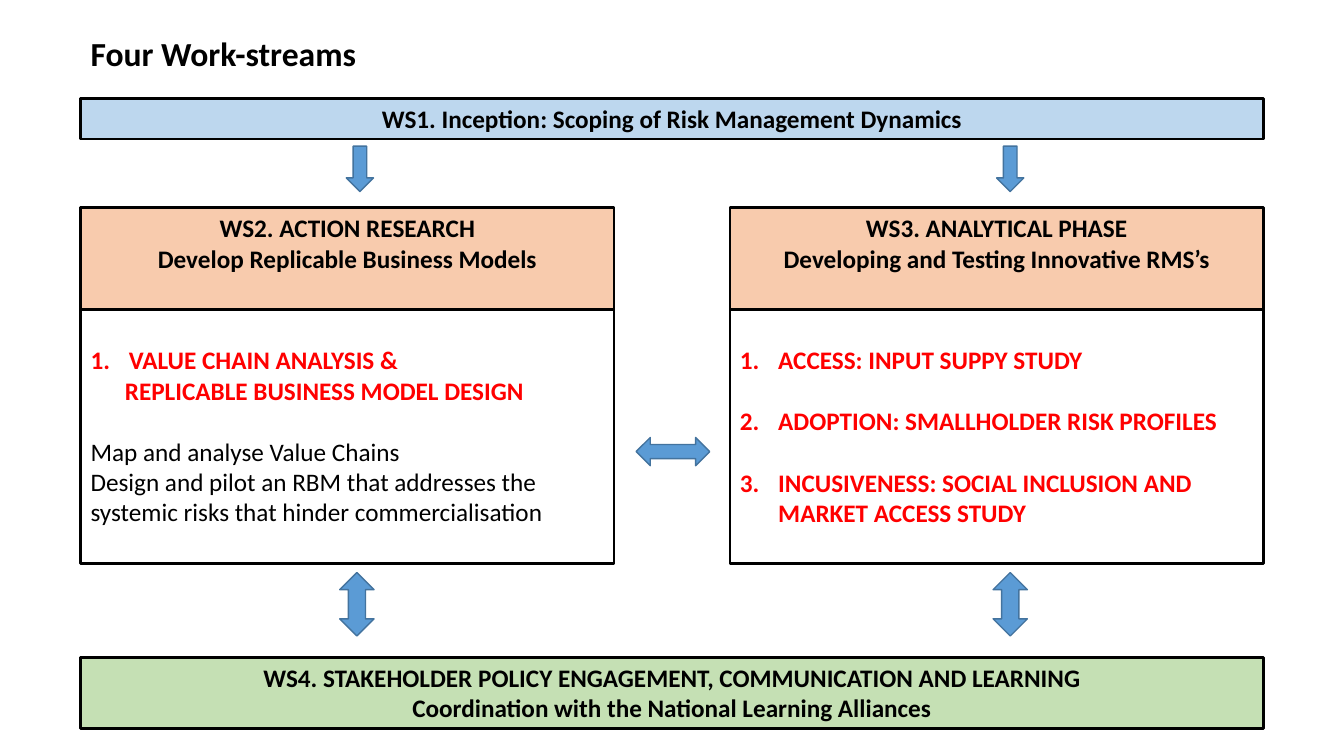
from lxml import etree
from pptx import Presentation, util as u
from pptx.dml.color import RGBColor
from pptx.enum import shapes, text
from pptx.oxml import ns

WIDE, HIGH = 13.33, 7.5
LEFT, FULL, COL = 0.8, 11.73, 5.29
COLS = (LEFT, LEFT + FULL - COL)
HEAD, BODY, FOOT = 2.06, 3.07, 6.52
LINE = 22
RED = "FF0000"
MID = text.PP_ALIGN.CENTER
KIND = shapes.MSO_SHAPE


def color(code):
    return RGBColor.from_string(code)


def write(frame, words, size=18, bold=True, ink="000000", align=None,
          after=0, left=0, number=False):
    first = frame.paragraphs[0]
    para = frame.add_paragraph() if first.runs else first
    para.alignment = align
    para.space_after = u.Pt(after)
    props = para._p.get_or_add_pPr()
    if left:
        props.set("marL", str(u.Inches(left)))
    if number:
        props.set("indent", str(-u.Inches(left)))
        mark = etree.SubElement(props, ns.qn("a:buAutoNum"))
        mark.set("type", "arabicPeriod")
    run = para.add_run()
    run.text = words
    run.font.name = "Calibri"
    run.font.size = u.Pt(size)
    run.font.bold = bold
    run.font.color.rgb = color(ink)


def shape(slide, kind, x, y, w, h, fill=None, edge="000000", thick=2):
    item = slide.shapes.add_shape(kind, *map(u.Inches, (x, y, w, h)))
    item.shadow.inherit = False
    if fill:
        item.fill.solid()
        item.fill.fore_color.rgb = color(fill)
    else:
        item.fill.background()
    item.line.color.rgb = color(edge)
    item.line.width = u.Pt(thick)
    return item


def box(slide, x, y, w, h, fill=None, lines=(), top=0.05):
    frame = shape(slide, KIND.RECTANGLE, x, y, w, h, fill).text_frame
    frame.word_wrap = True
    frame.vertical_anchor = text.MSO_ANCHOR.TOP
    frame.margin_top = u.Inches(top)
    for words in lines:
        write(frame, words, align=MID)
    return frame


def arrow(slide, kind, x, y, w, h):
    shape(slide, kind, x - w / 2, y, w, h, "5B9BD5", "43739E", 1)


def title(slide, words):
    area = map(u.Inches, (LEFT, 0.28, 3.77, 0.5))
    frame = slide.shapes.add_textbox(*area).text_frame
    frame.word_wrap = True
    write(frame, words, size=24)


def main():
    deck = Presentation()
    deck.slide_width, deck.slide_height = u.Inches(WIDE), u.Inches(HIGH)
    slide = deck.slides.add_slide(deck.slide_layouts[6])

    title(slide, "Four Work-streams")
    box(slide, LEFT, 0.98, FULL, 0.4, "BDD7EE",
        ["WS1. Inception: Scoping of Risk Management Dynamics"])

    heads = (
        ("WS2. ACTION RESEARCH", "Develop Replicable Business Models"),
        ("WS3. ANALYTICAL PHASE", "Developing and Testing Innovative RMS’s"),
    )
    bodies = []
    for x, lines in zip(COLS, heads):
        bodies.append(box(slide, x, BODY, COL, 2.52, top=0.35))
        box(slide, x, HEAD, COL, BODY - HEAD, "F8CBAD", lines)

    chain, study = bodies
    write(chain, "VALUE CHAIN ANALYSIS &", ink=RED, left=0.38, number=True)
    write(chain, "REPLICABLE BUSINESS MODEL DESIGN", ink=RED, left=0.34,
          after=LINE)
    for words in ("Map and analyse Value Chains",
                  "Design and pilot an RBM that addresses the systemic risks "
                  "that hinder commercialisation"):
        write(chain, words, bold=False)
    for words in ("ACCESS: INPUT SUPPY STUDY",
                  "ADOPTION: SMALLHOLDER RISK PROFILES",
                  "INCUSIVENESS: SOCIAL INCLUSION AND MARKET ACCESS STUDY"):
        write(study, words, ink=RED, left=0.38, number=True, after=LINE)

    box(slide, LEFT, FOOT, FULL, 0.71, "C5E0B4",
        ["WS4. STAKEHOLDER POLICY ENGAGEMENT, COMMUNICATION AND LEARNING",
         "Coordination with the National Learning Alliances"])

    for down, both in ((3.57, 3.54), (10.02, 10.02)):
        arrow(slide, KIND.DOWN_ARROW, down, 1.45, 0.27, 0.45)
        arrow(slide, KIND.UP_DOWN_ARROW, both, 5.68, 0.34, 0.63)
    arrow(slide, KIND.LEFT_RIGHT_ARROW, LEFT + FULL / 2 + 0.01, 4.34,
          0.73, 0.28)

    deck.save("out.pptx")


if __name__ == "__main__":
    main()
